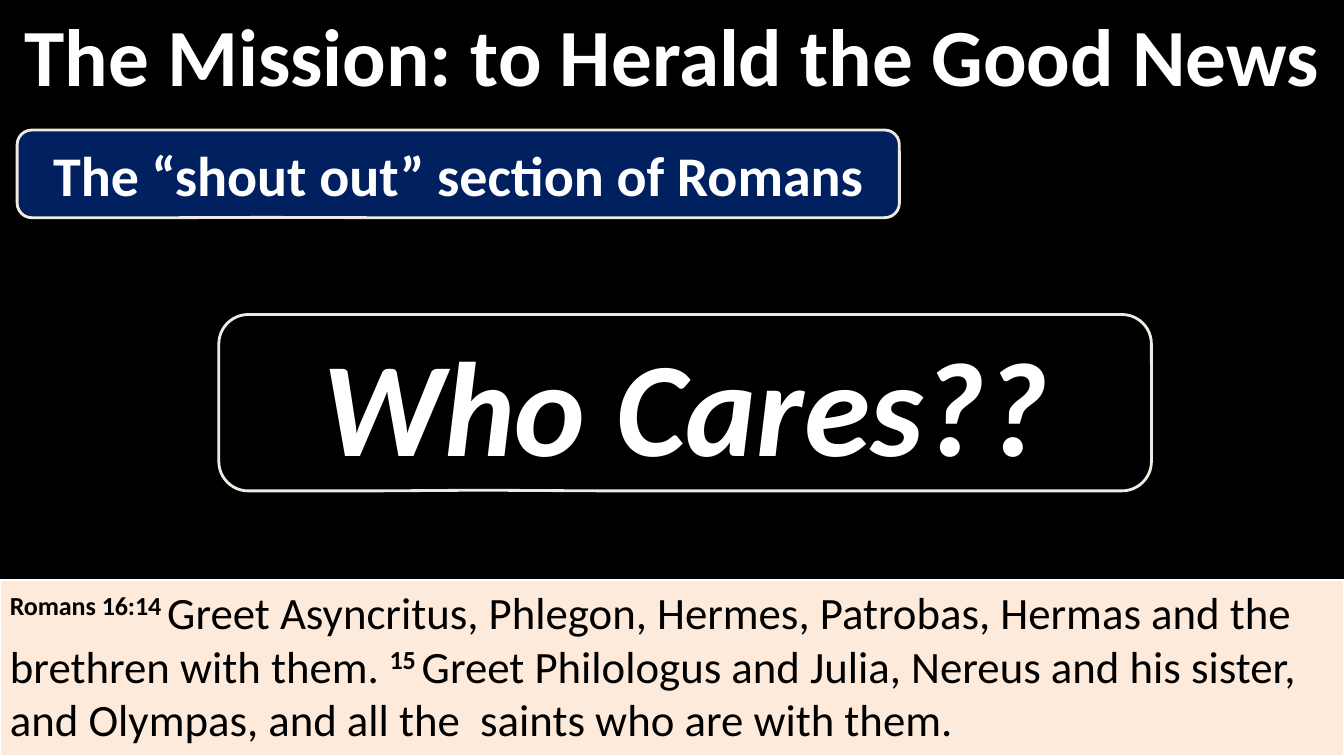
from dataclasses import dataclass
from typing import Optional

from lxml.etree import SubElement
from pptx import Presentation
from pptx.dml.color import RGBColor
from pptx.enum.shapes import MSO_SHAPE
from pptx.enum.text import MSO_ANCHOR, PP_ALIGN
from pptx.oxml.ns import qn
from pptx.util import Inches, Pt

FONT = "Calibri"
WHITE, BLACK, NAVY = "FFFFFF", "000000", "002060"
PEACH, IVORY = "FDEADA", "EEECE1"
SLIDE_WIDTH, SLIDE_HEIGHT = 13.33, 7.5
CALLOUT_ADJUSTMENTS = (-0.219, 0.496, 0.167)


@dataclass
class Callout:
    text: str
    left: float
    top: float
    width: float
    height: float
    fill: str
    size: int
    italic: bool = False
    opacity: Optional[int] = None


CALLOUTS = [
    Callout("Who Cares??", 2.17, 3.12, 9.25, 1.75, BLACK, 96, italic=True, opacity=70),
    Callout("The “shout out” section of Romans", 0.17, 1.29, 8.75, 0.87, NAVY, 40),
]

# Verse text as (text, is a verse number)
VERSES = [
    ("Romans 16:14 ", True),
    ("Greet Asyncritus, Phlegon, Hermes, Patrobas, Hermas and the brethren with them. ", False),
    ("15 ", True),
    ("Greet Philologus and Julia, Nereus and his sister, and Olympas, "
     "and all the  saints who are with them. ", False),
]


def rgb(color: str) -> RGBColor:
    return RGBColor.from_string(color)


def add_text(paragraph, text: str, *, size: int, color: str = WHITE, bold: bool = True,
             italic: bool = False, superscript: bool = False) -> None:
    run = paragraph.add_run()
    run.text = text
    font = run.font
    font.name, font.size, font.bold, font.italic = FONT, Pt(size), bold, italic
    font.color.rgb = rgb(color)
    if superscript:
        font._element.set("baseline", "30000")


def prepare_paragraph(shape, anchor: MSO_ANCHOR, alignment: PP_ALIGN):
    frame = shape.text_frame
    frame.word_wrap = True
    frame.vertical_anchor = anchor
    paragraph = frame.paragraphs[0]
    paragraph.alignment = alignment
    return paragraph


def add_box(slide, kind: MSO_SHAPE, left: float, top: float, width: float, height: float,
            fill: str, line: str, line_width: float):
    shape = slide.shapes.add_shape(kind, Inches(left), Inches(top), Inches(width), Inches(height))
    shape.shadow.inherit = False
    shape.fill.solid()
    shape.fill.fore_color.rgb = rgb(fill)
    shape.line.color.rgb = rgb(line)
    shape.line.width = Pt(line_width)
    return shape


def add_callout(slide, callout: Callout) -> None:
    shape = add_box(slide, MSO_SHAPE.ROUNDED_RECTANGULAR_CALLOUT, callout.left, callout.top,
                    callout.width, callout.height, callout.fill, IVORY, 2)
    for index, value in enumerate(CALLOUT_ADJUSTMENTS):
        shape.adjustments[index] = value
    if callout.opacity is not None:
        color = shape._element.spPr.find(qn("a:solidFill")).find(qn("a:srgbClr"))
        SubElement(color, qn("a:alpha")).set("val", str(callout.opacity * 1000))
    paragraph = prepare_paragraph(shape, MSO_ANCHOR.MIDDLE, PP_ALIGN.CENTER)
    add_text(paragraph, callout.text, size=callout.size, italic=callout.italic)


def main() -> None:
    presentation = Presentation()
    presentation.slide_width = Inches(SLIDE_WIDTH)
    presentation.slide_height = Inches(SLIDE_HEIGHT)
    slide = presentation.slides.add_slide(presentation.slide_layouts[6])
    slide.background.fill.solid()
    slide.background.fill.fore_color.rgb = rgb(BLACK)

    # Title
    title = slide.shapes.add_textbox(0, 0, Inches(SLIDE_WIDTH), Inches(1.08))
    paragraph = prepare_paragraph(title, MSO_ANCHOR.MIDDLE, PP_ALIGN.CENTER)
    add_text(paragraph, "The Mission: to Herald the Good News", size=58)

    # Scripture band
    band = add_box(slide, MSO_SHAPE.RECTANGLE, 0, 5.75, SLIDE_WIDTH, 1.75, PEACH, WHITE, 1.5)
    paragraph = prepare_paragraph(band, MSO_ANCHOR.TOP, PP_ALIGN.LEFT)
    for text, is_number in VERSES:
        add_text(paragraph, text, size=32, color=BLACK, bold=is_number, superscript=is_number)

    # Callouts
    for callout in CALLOUTS:
        add_callout(slide, callout)

    presentation.save("out.pptx")


if __name__ == "__main__":
    main()
